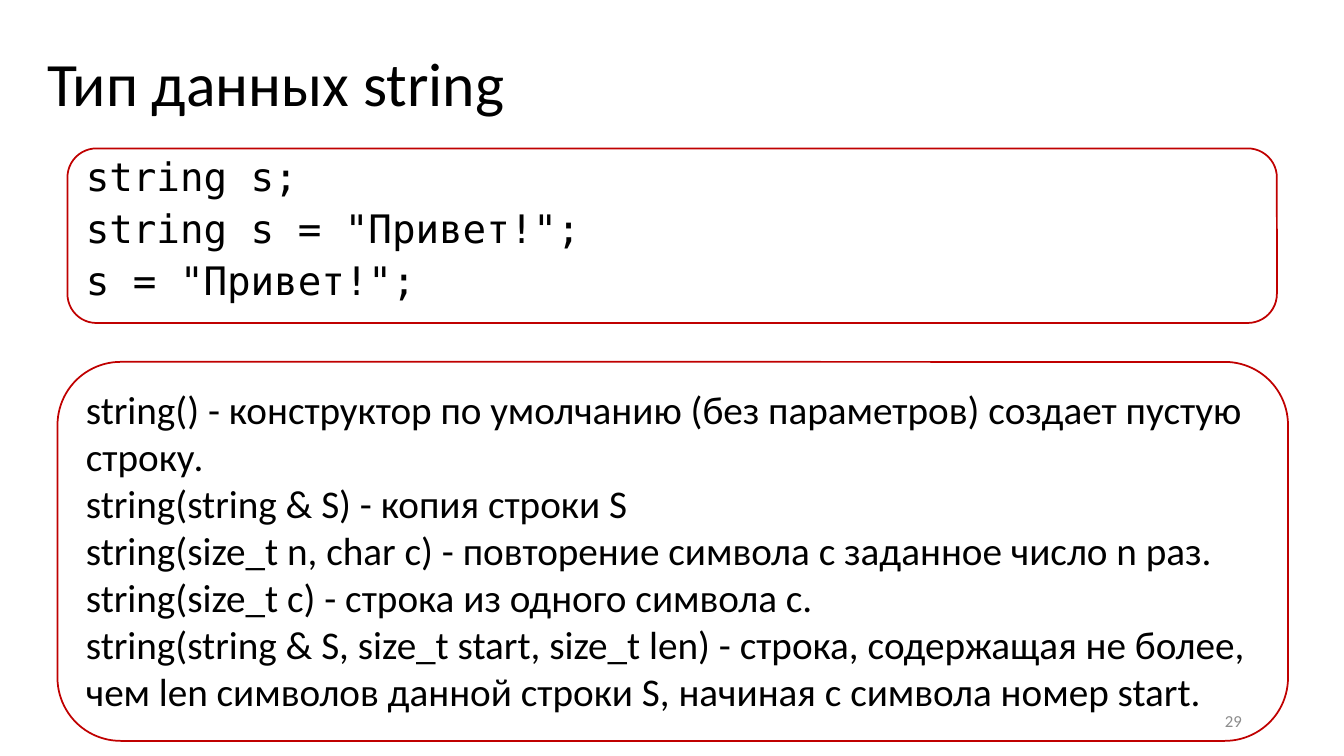
from pptx import Presentation
from pptx.dml.color import RGBColor
from pptx.enum import shapes, text
from pptx.util import Cm, Pt

BLACK = RGBColor(0x00, 0x00, 0x00)
RED = RGBColor(0xC0, 0x00, 0x00)
GRAY = RGBColor(0x8C, 0x8C, 0x8C)

TITLE = ["Тип данных string"]
CODE = ["string s;", 'string s = "Привет!";', 's = "Привет!";']
CONSTRUCTORS = [
    "string() - конструктор по умолчанию (без параметров) создает пустую строку.",
    "string(string & S) - копия строки S",
    "string(size_t n, char c) - повторение символа c заданное число n раз.",
    "string(size_t c) - строка из одного символа c.",
    "string(string & S, size_t start, size_t len) - строка, содержащая не более, "
    "чем len символов данной строки S, начиная с символа номер start.",
]
PAGE_NUMBER = ["29"]


def write(shape, lines, size, font="Calibri", color=BLACK, align=text.PP_ALIGN.LEFT,
          anchor=text.MSO_ANCHOR.TOP, line_spacing=1.0, space_before=0):
    frame = shape.text_frame
    frame.text = "\n".join(lines)
    frame.word_wrap = True
    frame.vertical_anchor = anchor
    for paragraph in frame.paragraphs:
        paragraph.alignment = align
        paragraph.line_spacing = line_spacing
        paragraph.space_before = Pt(space_before)
        for run in paragraph.runs:
            run.font.name = font
            run.font.size = Pt(size)
            run.font.color.rgb = color


def add_text(slide, box, lines, size, **style):
    shape = slide.shapes.add_textbox(*map(Cm, box))
    write(shape, lines, size, anchor=text.MSO_ANCHOR.MIDDLE, **style)


def add_panel(slide, box, lines, **style):
    shape = slide.shapes.add_shape(shapes.MSO_SHAPE.ROUNDED_RECTANGLE, *map(Cm, box))
    shape.shadow.inherit = False
    shape.fill.background()
    shape.line.color.rgb = RED
    shape.line.width = Pt(1.25)
    write(shape, lines, 28, **style)


def main():
    presentation = Presentation()
    presentation.slide_width = Cm(33.87)
    presentation.slide_height = Cm(19.05)
    slide = presentation.slides.add_slide(presentation.slide_layouts[6])

    add_text(slide, (0.94, 0.33, 29.21, 3.68), TITLE, 44, line_spacing=0.9)
    add_panel(slide, (1.7, 3.74, 30.48, 4.4), CODE,
              font="DejaVu Sans Mono", line_spacing=0.8, space_before=10)
    add_panel(slide, (1.45, 9.12, 31.01, 9.55), CONSTRUCTORS)
    add_text(slide, (23.93, 17.65, 7.62, 1.02), PAGE_NUMBER, 12,
             color=GRAY, align=text.PP_ALIGN.RIGHT)

    presentation.save("out.pptx")


if __name__ == "__main__":
    main()
